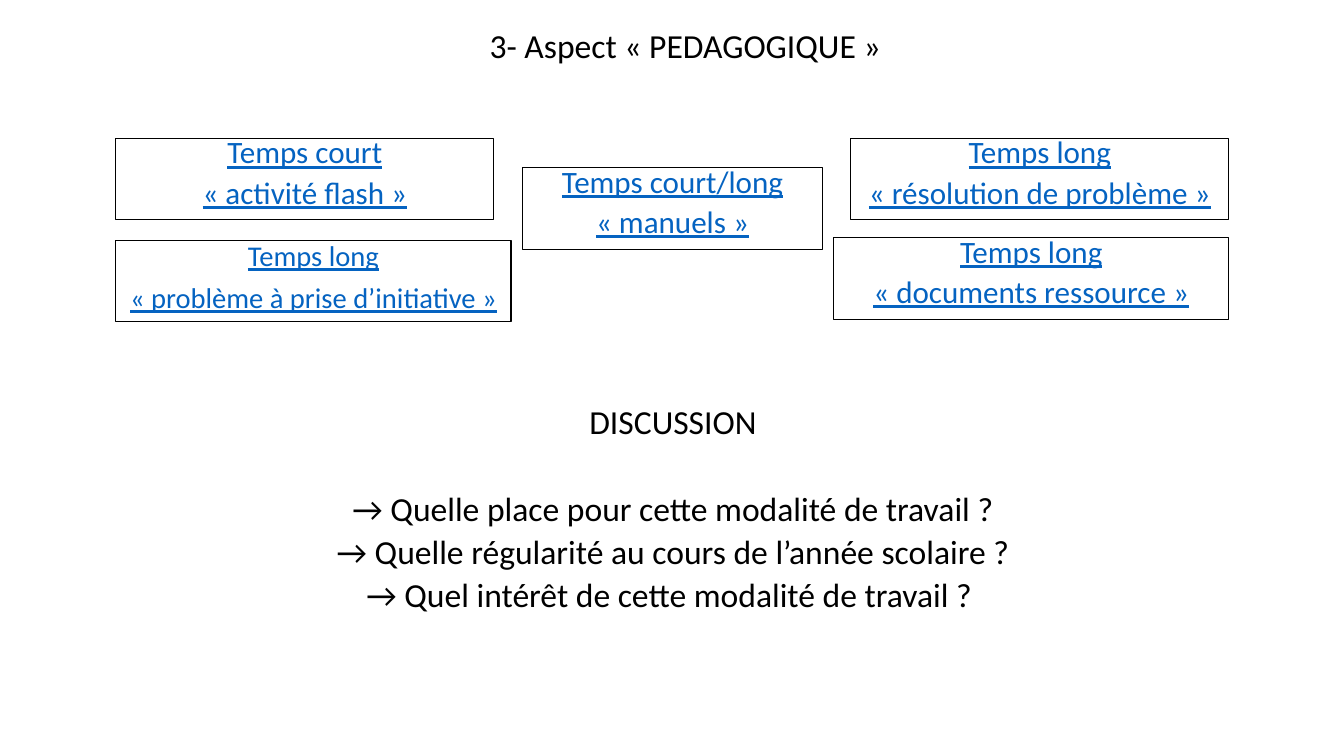
import pptx
import pptx.dml.color
import pptx.enum.shapes
import pptx.enum.text
import pptx.util
from dataclasses import dataclass

Cm, Pt = pptx.util.Cm, pptx.util.Pt
RGB = pptx.dml.color.RGBColor.from_string


@dataclass(frozen=True)
class Theme:
    font: str = "Calibri"
    ink: pptx.dml.color.RGBColor = RGB("000000")
    activity: pptx.dml.color.RGBColor = RGB("0563C1")
    body_size: float = 24
    activity_size: float = 22.2
    long_activity_size: float = 20.4
    border: float = 0.75


theme = Theme()


def write_lines(frame, lines, font_format, paragraph_format):
    """Fill a text frame with one centred paragraph per line."""
    frame.word_wrap = True
    frame.vertical_anchor = pptx.enum.text.MSO_ANCHOR.TOP
    for number, line in enumerate(lines):
        paragraph = frame.paragraphs[0] if number == 0 else frame.add_paragraph()
        paragraph.alignment = pptx.enum.text.PP_ALIGN.CENTER
        for name, value in paragraph_format.items():
            setattr(paragraph, name, value)
        run = paragraph.add_run()
        run.text = line
        for name, value in font_format.items():
            setattr(run.font, name, value)
        run.font.color.rgb = theme.activity if font_format.get("underline") else theme.ink


presentation = pptx.Presentation()
presentation.slide_width, presentation.slide_height = Cm(33.87), Cm(19.05)
slide = presentation.slides.add_slide(presentation.slide_layouts[6])
body_font = {"name": theme.font, "size": Pt(theme.body_size)}

# Heading
heading = slide.shapes.add_textbox(Cm(4.57), Cm(0.61), Cm(25.4), Cm(16.28))
write_lines(heading.text_frame, ["3- Aspect « PEDAGOGIQUE »"], body_font,
            {"line_spacing": 0.9, "space_before": Pt(10)})

# Activities: left, top, width, duration, kind, type size, line spacing
left_edge, right_edge, box_height = 2.92, 30.97, 2.06
narrow, wide = 9.53, 9.96
regular = (theme.activity_size, 0.7)
reduced = (theme.long_activity_size, 0.8)
activities = [
    (left_edge, 3.48, narrow, "Temps court", "« activité flash »", regular),
    (right_edge - narrow, 3.48, narrow, "Temps long", "« résolution de problème »", regular),
    (right_edge - wide, 5.99, wide, "Temps long", "« documents ressource »", regular),
    (left_edge, 6.05, wide, "Temps long", "« problème à prise d’initiative »", reduced),
    (13.18, 4.22, 7.54, "Temps court/long", "« manuels »", regular),
]
for left, top, width, duration, kind, (size, spacing) in activities:
    activity = slide.shapes.add_shape(pptx.enum.shapes.MSO_SHAPE.RECTANGLE,
                                      Cm(left), Cm(top), Cm(width), Cm(box_height))
    activity.shadow.inherit = False
    activity.fill.background()
    activity.line.color.rgb = theme.ink
    activity.line.width = Pt(theme.border)
    write_lines(activity.text_frame, [duration, kind],
                {"name": theme.font, "size": Pt(size), "underline": True},
                {"line_spacing": spacing, "space_before": Pt(10)})

# Discussion, with a line-high gap under its title
discussion = slide.shapes.add_textbox(Cm(4.83), Cm(9.91), Cm(24.26), Cm(5.92))
write_lines(discussion.text_frame, [
    "DISCUSSION",
    "→ Quelle place pour cette modalité de travail ?",
    "→ Quelle régularité au cours de l’année scolaire ?",
    "→ Quel intérêt de cette modalité de travail ? ",
], body_font, {"line_spacing": 1.07})
discussion.text_frame.paragraphs[0].space_after = Pt(31)

presentation.save("out.pptx")
